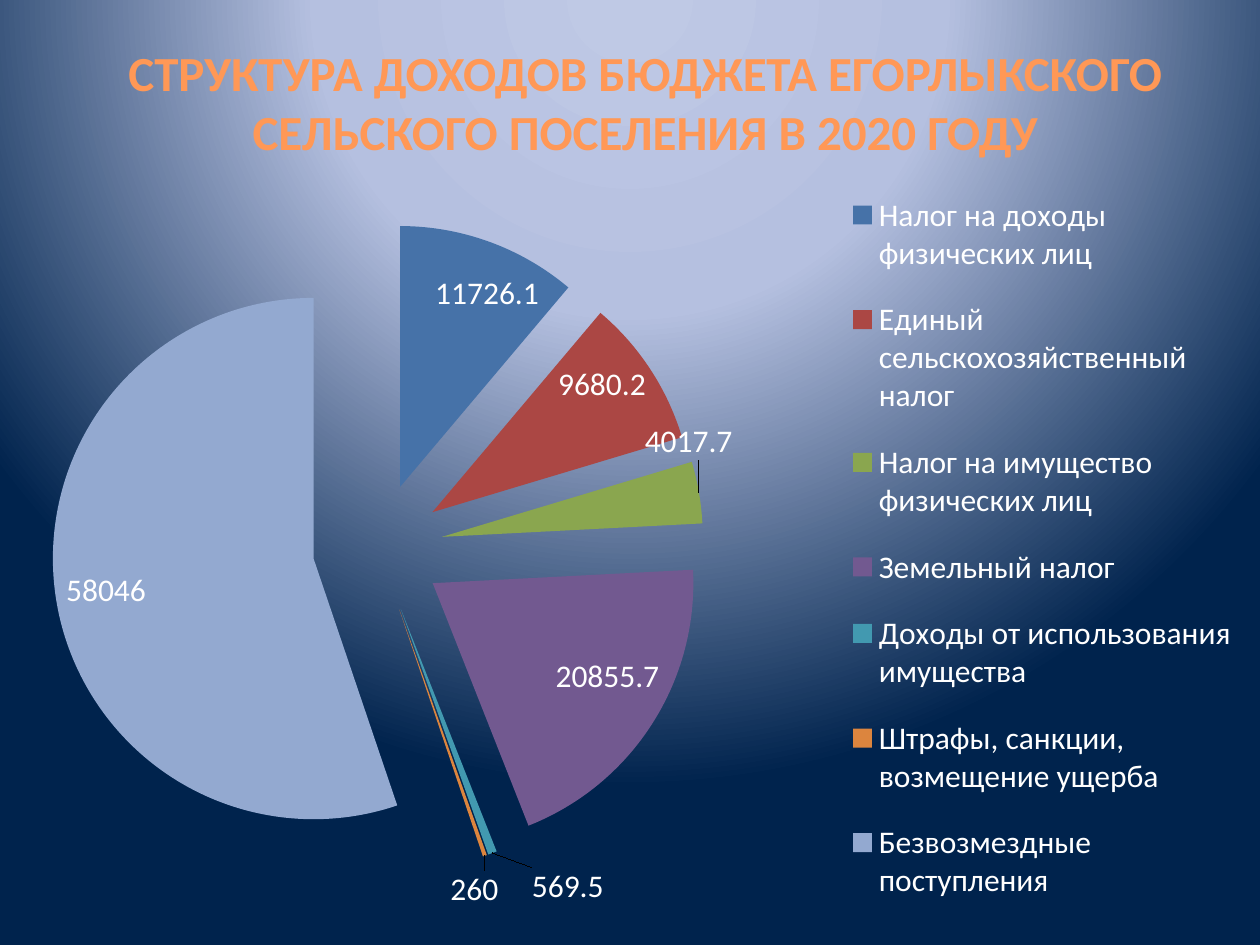
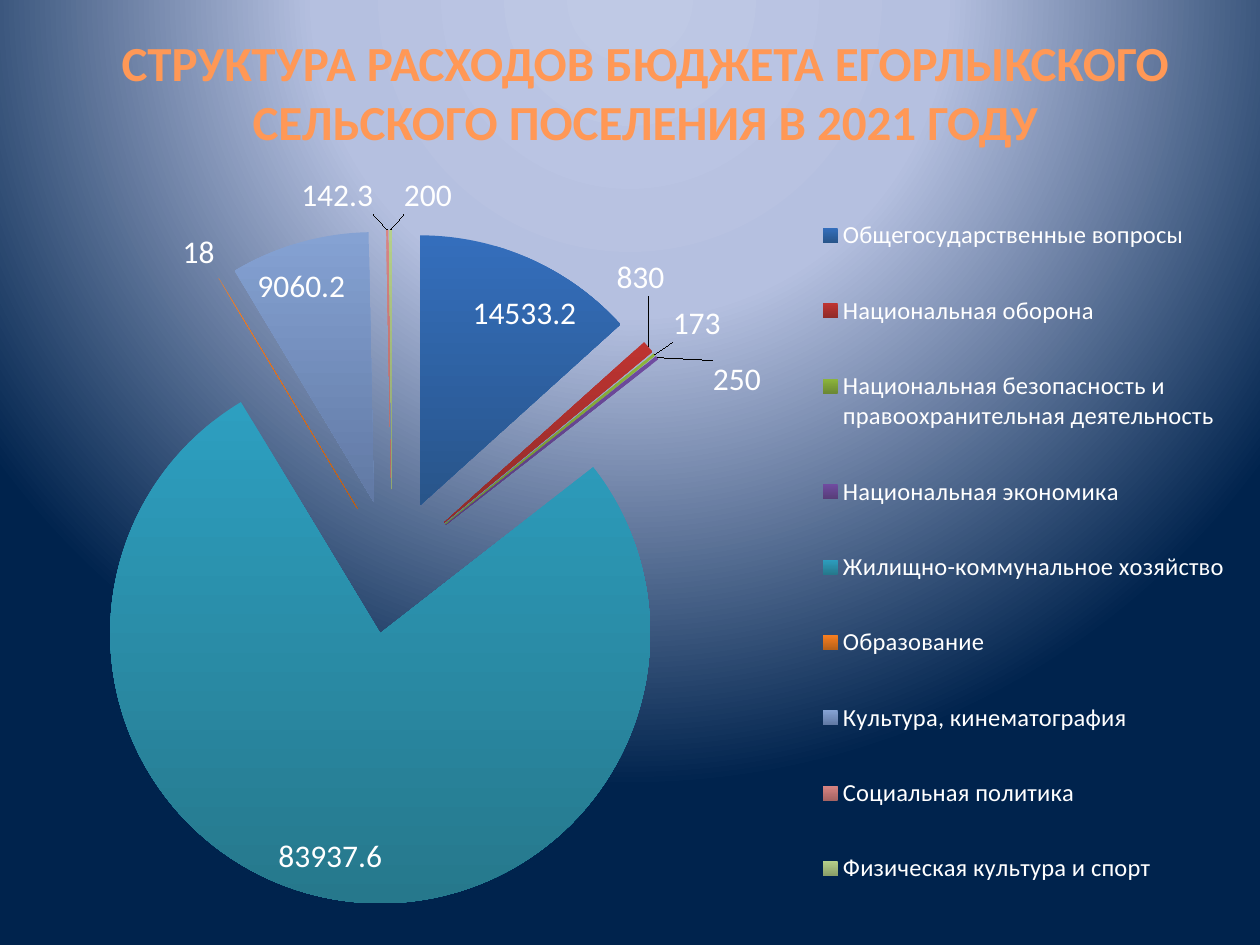
from lxml import etree
from pptx import Presentation
from pptx.chart.data import CategoryChartData
from pptx.enum.chart import XL_CHART_TYPE as Chart, XL_LABEL_POSITION as LabelPos
from pptx.enum.chart import XL_LEGEND_POSITION as LegendPos
from pptx.enum.text import MSO_ANCHOR as Anchor, MSO_AUTO_SIZE as AutoSize, PP_ALIGN as Align
from pptx.dml.color import RGBColor
from pptx.oxml import parse_xml
from pptx.oxml.ns import nsdecls, qn
from pptx.util import Inches, Pt

FONT = "Calibri"
COLORS = {
    "text": "FFFFFF",
    "glow": "BFC9E5", "haze": "B5C0E0", "navy": "00234D",
    "title_dark": "9D4700", "title": "FF9856", "title_light": "FFF5F1",
}
BACKGROUND_STOPS = [(0, "glow"), (40, "haze"), (100, "navy")]
TITLE_STOPS = [(0, "title_dark"), (78, "title"), (100, "title_light")]
CIRCLE = '<a:path path="circle"><a:fillToRect l="50000" t="-80000" r="50000" b="180000"/></a:path>'
DOWNWARD = '<a:lin ang="5400000" scaled="0"/>'

SLIDES = [
    {
        "title": "СТРУКТУРА ДОХОДОВ БЮДЖЕТА ЕГОРЛЫКСКОГО СЕЛЬСКОГО ПОСЕЛЕНИЯ В 2020 ГОДУ",
        "title_top": 0.29,
        "chart_left": 0.12,
        "pie": (0.03, 0.07, 0.53, 0.86),
        "legend": (0.67, 0, 0.33, 1),
        "legend_size": 18,
        "slices": [
            ("Налог на доходы физических лиц", 11726.1, ["4672A8"], None),
            ("Единый сельскохозяйственный налог", 9680.2, ["AB4744"], (-0.08, 0.05)),
            ("Налог на имущество физических лиц", 4017.7, ["8AA64F"], (-0.05, -0.04)),
            ("Земельный налог", 20855.7, ["725990"], None),
            ("Доходы от использования имущества", 569.5, ["4299B0"], (0.03, 0.01)),
            ("Штрафы, санкции, возмещение ущерба", 260, ["DC853E"], (-0.03, 0.01)),
            ("Безвозмездные поступления", 58046, ["93A9D0"], None),
        ],
    },
    {
        "title": "СТРУКТУРА РАСХОДОВ БЮДЖЕТА ЕГОРЛЫКСКОГО СЕЛЬСКОГО ПОСЕЛЕНИЯ В 2021 ГОДУ",
        "title_top": 0.21,
        "chart_left": 0.04,
        "pie": (0.04, 0.08, 0.54, 0.89),
        "legend": (0.64, 0.01, 0.35, 0.99),
        "legend_size": 14,
        "slices": [
            ("Общегосударственные вопросы", 14533.2, ["346EBC", "28558A"], None),
            ("Национальная оборона", 830, ["BE3431", "8F2B29"], (-0.03, -0.06)),
            ("Национальная безопасность и правоохранительная деятельность", 173,
             ["8DB63C", "6B8834"], (0.01, -0.01)),
            ("Национальная экономика", 250, ["704BA0", "573D78"], (0.04, 0.06)),
            ("Жилищно-коммунальное хозяйство", 83937.6, ["2D9FC0", "26788C"], None),
            ("Образование", 18, ["F97F20", "B66019"], None),
            ("Культура, кинематография", 9060.2, ["85A2D3", "6179A4"], None),
            ("Социальная политика", 142.3, ["D98583", "A66463"], (-0.04, -0.01)),
            ("Физическая культура и спорт", 200, ["B5D08A", "8A9F69"], (0.03, -0.01)),
        ],
    },
]


def gradient(stops, direction):
    marks = "".join(
        f'<a:gs pos="{pos * 1000}"><a:srgbClr val="{color}"/></a:gs>' for pos, color in stops)
    return parse_xml(f'<a:gradFill {nsdecls("a")} rotWithShape="1">'
                     f'<a:gsLst>{marks}</a:gsLst>{direction}</a:gradFill>')


def named(stops):
    return [(pos, COLORS[name]) for pos, name in stops]


def swap_solid(parent, fill):
    solid = parent.find(qn("a:solidFill"))
    parent.replace(solid, fill)


def paint_background(master):
    master.background.fill.solid()
    bg = master.element.find(".//" + qn("p:bgPr"))
    swap_solid(bg, gradient(named(BACKGROUND_STOPS), CIRCLE))


def set_font(font, size):
    font.name = FONT
    font.size = Pt(size)
    font.color.rgb = RGBColor.from_string(COLORS["text"])


def place(parent, index, x, y, w=None, h=None, inner=False):
    for old in parent.findall(qn("c:layout")):
        parent.remove(old)
    layout = etree.Element(qn("c:layout"))
    manual = etree.SubElement(layout, qn("c:manualLayout"))
    fields = [("layoutTarget", "inner")] if inner else []
    if w is not None:
        fields += [("xMode", "edge"), ("yMode", "edge")]
    fields += [(k, v) for k, v in zip("xywh", (x, y, w, h)) if v is not None]
    for name, value in fields:
        etree.SubElement(manual, qn(f"c:{name}")).set("val", str(value))
    parent.insert(index, layout)


def add_title(s, text, top):
    sp = s.shapes.title
    sp.left, sp.top, sp.width, sp.height = map(Inches, (0.83, top, 8.58, 1.04))
    tf = sp.text_frame
    tf.text = text
    tf.word_wrap = True
    tf.auto_size = AutoSize.NONE
    tf.vertical_anchor = Anchor.TOP
    p = tf.paragraphs[0]
    p.alignment = Align.CENTER
    r = p.runs[0]
    set_font(r.font, 28)
    r.font.bold = True
    swap_solid(r.font.fill._xPr, gradient(named(TITLE_STOPS), DOWNWARD))


def color_slice(point, colors):
    point.format.fill.solid()
    point.format.fill.fore_color.rgb = RGBColor.from_string(colors[0])
    if len(colors) == 2:
        props = point.format.fill._xPr
        swap_solid(props, gradient(list(zip((0, 100), colors)), DOWNWARD))


def add_pie(s, item):
    data = CategoryChartData()
    data.categories = [name for name, *_ in item["slices"]]
    data.add_series("Series 1", [value for _, value, *_ in item["slices"]])
    left = item["chart_left"]
    box = map(Inches, (left, 1.33, 10 - 2 * left, 6.04))
    chart = s.shapes.add_chart(Chart.PIE, *box, data).chart
    chart.has_title = False
    set_font(chart.font, 18)

    chart.has_legend = True
    legend = chart.legend
    legend.position = LegendPos.RIGHT
    legend.include_in_layout = False
    set_font(legend.font, item["legend_size"])
    place(legend._element, 1, *item["legend"])

    plot = chart.plots[0]
    plot.vary_by_categories = True
    place(plot._element.getparent(), 0, *item["pie"], inner=True)

    series = plot.series[0]
    explosion = etree.Element(qn("c:explosion"))
    explosion.set("val", "25")
    series._element.find(qn("c:tx")).addnext(explosion)

    labels = series.data_labels
    labels.show_value = True
    labels.position = LabelPos.BEST_FIT
    set_font(labels.font, 18)
    for i, (_, _, colors, shift) in enumerate(item["slices"]):
        point = series.points[i]
        color_slice(point, colors)
        if shift:
            label = point.data_label
            label.position = LabelPos.BEST_FIT
            set_font(label.font, 18)
            place(labels._element.findall(qn("c:dLbl"))[-1], 1, *shift)


def main():
    prs = Presentation()
    prs.slide_width, prs.slide_height = Inches(10), Inches(7.5)
    paint_background(prs.slide_master)
    for item in SLIDES:
        s = prs.slides.add_slide(prs.slide_layouts[5])
        add_title(s, item["title"], item["title_top"])
        add_pie(s, item)
    prs.save("out.pptx")


if __name__ == "__main__":
    main()
